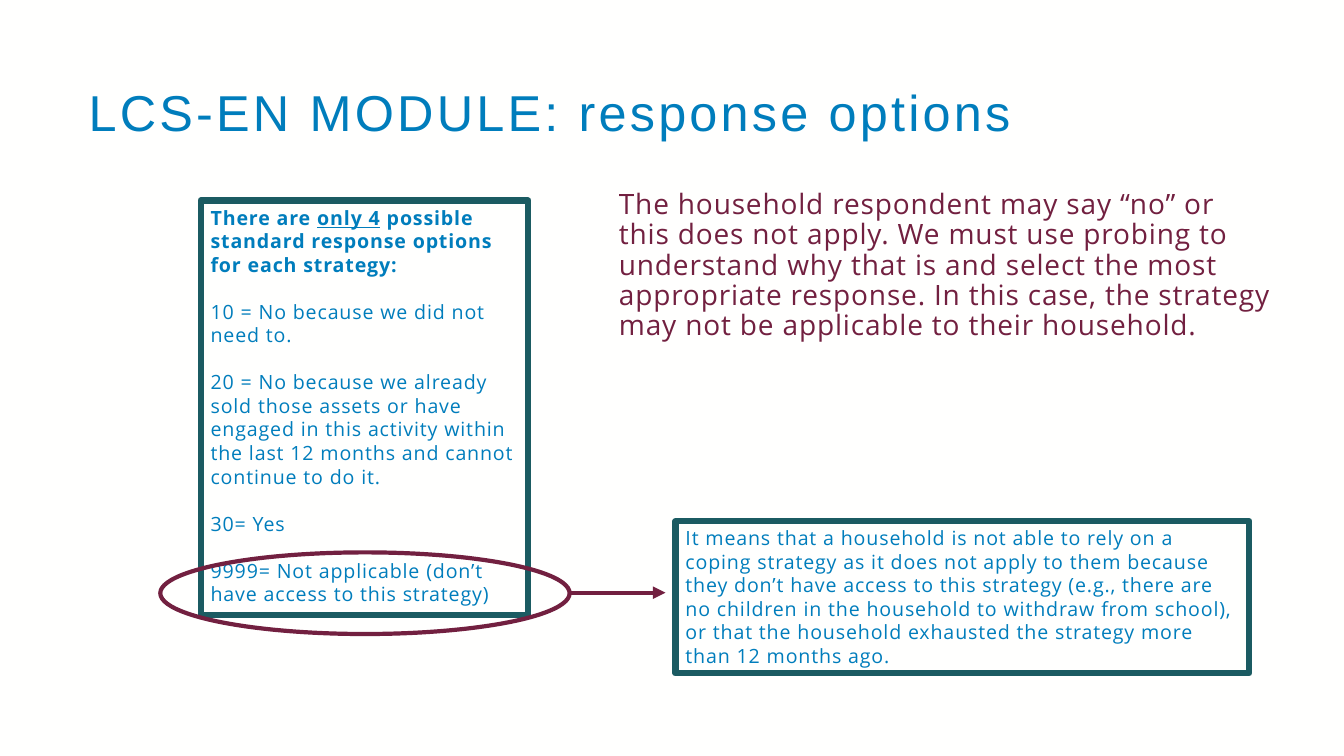
from lxml import etree
from pptx import Presentation
from pptx import util as u
from pptx.dml.color import RGBColor
from pptx.enum import shapes, text
from pptx.oxml.ns import qn

COLORS = {"paper": "FFFFFE", "blue": "007DBC", "teal": "1B5B62", "plum": "722040"}


def rgb(name):
    return RGBColor.from_string(COLORS[name])


class SlideBuilder:
    """Holds the current slide and its text style."""

    font = "Open Sans"
    spacing = 0.6

    def __init__(self, slide):
        self.slide = slide
        slide.background.fill.solid()
        slide.background.fill.fore_color.rgb = rgb("paper")

    def style_run(self, r, size, color, font=None, spacing=None):
        r.font.size = u.Pt(size)
        r.font.name = font or self.font
        r.font.color.rgb = rgb(color)
        r._r.get_or_add_rPr().set("spc", str(round((spacing or self.spacing) * 100)))

    def text_box(self, box, content, size, color, font=None, spacing=None,
                 anchor=text.MSO_ANCHOR.TOP):
        sp = self.slide.shapes.add_textbox(*map(u.Inches, box))
        tf = sp.text_frame
        tf.word_wrap = True
        tf.vertical_anchor = anchor
        tf.text = content
        p = tf.paragraphs[0]
        p.line_spacing = 0.9
        for r in p.runs:
            self.style_run(r, size, color, font, spacing)

    def outline(self, kind, box, color, width):
        sp = self.slide.shapes.add_shape(kind, *map(u.Inches, box))
        sp.shadow.inherit = False
        sp.fill.background()
        sp.line.color.rgb = rgb(color)
        sp.line.width = u.Pt(width)
        return sp

    def framed_text(self, box, paragraphs, gap=0):
        """Each paragraph is a list of (text, bold, underline) runs."""
        sp = self.outline(shapes.MSO_SHAPE.RECTANGLE, box, "teal", 4.5)
        tf = sp.text_frame
        tf.word_wrap = True
        tf.vertical_anchor = text.MSO_ANCHOR.TOP
        for i, runs in enumerate(paragraphs):
            p = tf.add_paragraph() if i else tf.paragraphs[0]
            p.alignment = text.PP_ALIGN.LEFT
            if i:
                p.space_before = u.Pt(gap)
            for content, bold, underline in runs:
                r = p.add_run()
                r.text = content
                self.style_run(r, 14, "blue")
                r.font.bold = bold
                r.font.underline = underline

    def arrow(self, x1, y1, x2, y2, color, width):
        line = self.slide.shapes.add_connector(
            shapes.MSO_CONNECTOR.STRAIGHT, *map(u.Inches, (x1, y1, x2, y2)))
        line.line.color.rgb = rgb(color)
        line.line.width = u.Pt(width)
        etree.SubElement(line.line._get_or_add_ln(), qn("a:tailEnd"), type="triangle")
        etree.SubElement(line._element.spPr, qn("a:effectLst"))


def main():
    prs = Presentation()
    prs.slide_width, prs.slide_height = u.Inches(13.33), u.Inches(7.5)
    s = SlideBuilder(prs.slides.add_slide(prs.slide_layouts[6]))

    # Title
    s.text_box((0.78, 0.78, 12.09, 0.72), "LCS-EN MODULE: response options",
               36, "blue", "Arial", 2.3, text.MSO_ANCHOR.MIDDLE)

    # Response options, one line apart
    heading = [("There are ", True, False), ("only 4", True, True),
               (" possible standard response options for each strategy:", True, False)]
    options = [
        "10 = No because we did not need to.",
        "20 = No because we already sold those assets or have engaged in this "
        "activity within the last 12 months and cannot continue to do it.",
        "30= Yes",
        "9999= Not applicable (don’t have access to this strategy)",
    ]
    s.framed_text((1.99, 1.99, 3.25, 4.11),
                  [heading] + [[(o, False, False)] for o in options], gap=16.8)

    # Meaning of "not applicable"
    meaning = ("It means that a household is not able to rely on a coping strategy as it "
               "does not apply to them because they don’t have access to this strategy "
               "(e.g., there are no children in the household to withdraw from school), "
               "or that the household exhausted the strategy more than 12 months ago.")
    s.framed_text((6.7, 5.17, 5.69, 1.51), [[(meaning, False, False)]])

    # Highlight and arrow
    s.arrow(5.64, 5.88, 6.6, 5.88, "plum", 3)
    s.outline(shapes.MSO_SHAPE.OVAL, (1.59, 5.48, 4.06, 0.81), "plum", 3)

    # Guidance on probing
    s.text_box((6.04, 1.84, 6.67, 2.06),
               "The household respondent may say “no” or this does not apply. We must use "
               "probing to understand why that is and select the most appropriate response. "
               "In this case, the strategy may not be applicable to their household.",
               20, "plum")

    prs.save("out.pptx")


if __name__ == "__main__":
    main()
